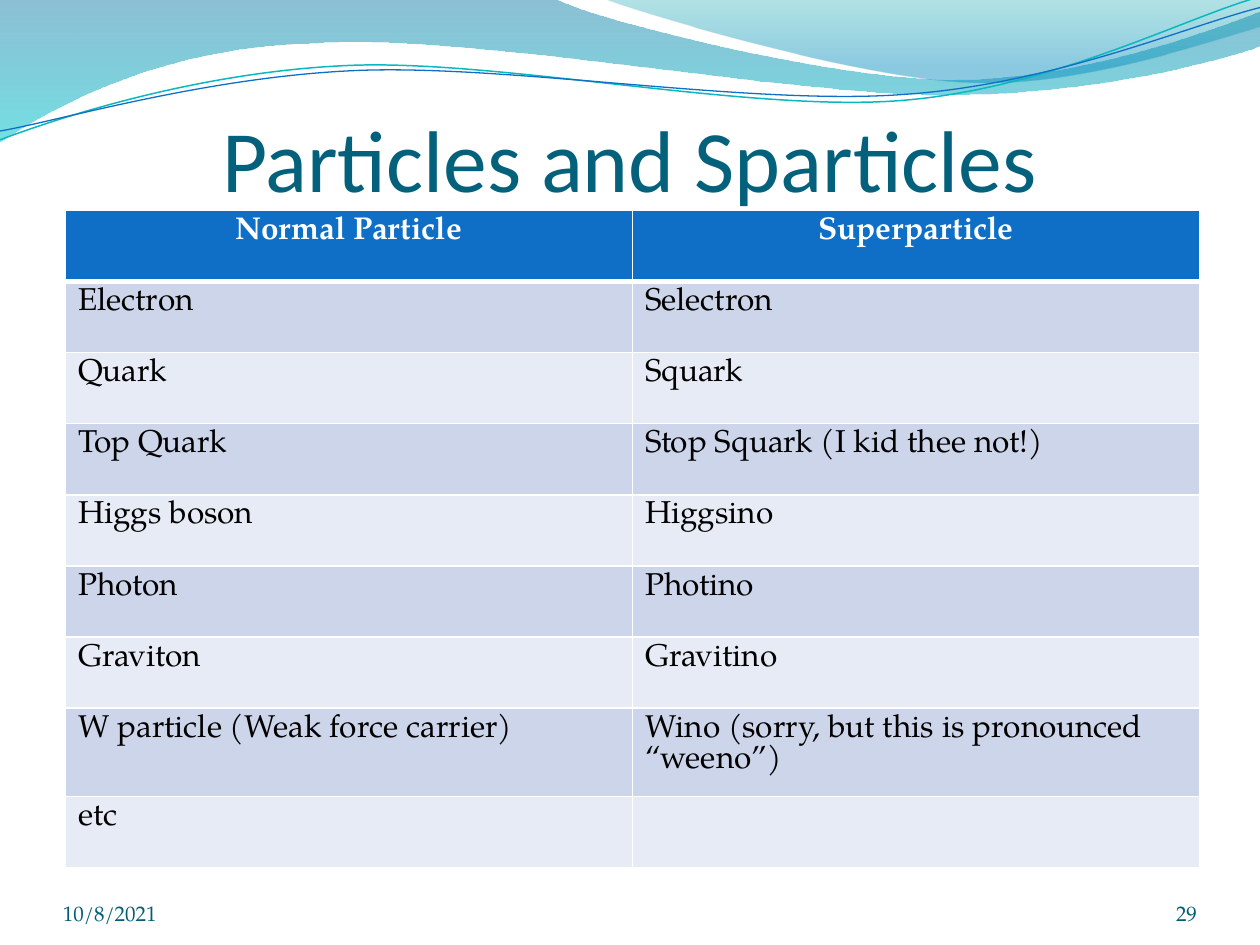
import pptx
import pptx.dml.color
import pptx.enum.text
import pptx.oxml
import pptx.oxml.ns
import pptx.util
from lxml import etree

Inches, Pt = pptx.util.Inches, pptx.util.Pt
RGBColor = pptx.dml.color.RGBColor
ALIGN = pptx.enum.text.PP_ALIGN
BOTTOM = pptx.enum.text.MSO_ANCHOR.BOTTOM
qn = pptx.oxml.ns.qn

WHITE = RGBColor(0xFF, 0xFF, 0xFF)
BLACK = RGBColor(0, 0, 0)
BLUE = RGBColor(0x0F, 0x6F, 0xC6)
TEAL = RGBColor(0x0A, 0xB8, 0xBF)
TITLE = RGBColor(0x04, 0x61, 0x7B)
FOOT = RGBColor(0x04, 0x5D, 0x75)
BANDS = RGBColor(0xE7, 0xEB, 0xF5), RGBColor(0xCC, 0xD5, 0xEA)
DEEP = RGBColor(0x00, 0x74, 0xA1)
AQUA = RGBColor(0x00, 0xC6, 0xCF)
GREEN = RGBColor(0x00, 0xA1, 0xA9)
SKY = RGBColor(0x00, 0x8B, 0xBF)

HEAD, BODY = "Calibri", "TeX Gyre Pagella"

# Each wave is a start point, then line ends (2 numbers) or curves (6 numbers).
BAND = [(0, 0), (4.4, -0.01), (4.76, 0.17, 6.64, 0.63, 7.58, 0.63),
        (8.53, 0.63, 9.58, 0.26, 10, 0.09), (10.01, 0.36),
        (9.83, 0.44, 8.7, 0.76, 7.46, 0.75),
        (6.22, 0.75, 3.82, 0.28, 2.57, 0.34),
        (1.29, 0.36, 0.46, 0.83, -0.01, 1.13), (0, 0)]
CREST = [(4.79, -0.01), (5.09, 0.11, 6.82, 0.62, 7.69, 0.65),
         (8.56, 0.69, 9.61, 0.32, 10, 0.21), (10, 0), (4.79, -0.01)]
UPPER = [(0, 1.11), (0.48, 0.93, 1.58, 0.57, 2.77, 0.52),
         (3.95, 0.47, 5.93, 0.89, 7.13, 0.8),
         (8.33, 0.71, 9.38, 0.15, 9.98, -0.02)]
LOWER = [(0, 1.04), (0.47, 0.96, 1.64, 0.61, 2.83, 0.56),
         (4.03, 0.51, 5.97, 0.84, 7.17, 0.75),
         (8.36, 0.67, 9.41, 0.21, 10, 0.06)]

ROWS = [
    ("Normal Particle", "Superparticle"),
    ("Electron", "Selectron"),
    ("Quark", "Squark"),
    ("Top Quark", "Stop Squark (I kid thee not!)"),
    ("Higgs boson", "Higgsino"),
    ("Photon", "Photino"),
    ("Graviton", "Gravitino"),
    ("W particle (Weak force carrier)",
     "Wino (sorry, but this is pronounced “weeno”)"),
    ("etc", ""),
]


class Deck:
    def __init__(self):
        self.file = pptx.Presentation()
        self.file.slide_width = Inches(10)
        self.file.slide_height = Inches(7.5)
        self.slide = self.file.slides.add_slide(self.file.slide_layouts[6])

    def style(self, font, size, color, face=BODY, bold=False):
        font.name, font.size, font.bold = face, Pt(size), bold
        font.color.rgb = color

    def wave(self, wave, closed):
        """Draw the wave's end points, then bend its lines into curves."""
        ends = [tuple(map(Inches, part[-2:])) for part in wave]
        pen = self.slide.shapes.build_freeform(*ends[0])
        pen.add_line_segments(ends[1:], close=closed)
        shape = pen.convert_to_shape()
        shape.shadow.inherit = False
        lines = list(shape._element.iter(qn("a:lnTo")))
        for line, part in zip(lines, wave[1:]):
            if len(part) == 2:
                continue
            bend = etree.Element(qn("a:cubicBezTo"))
            for x, y in zip(part[::2], part[1::2]):
                etree.SubElement(bend, qn("a:pt"), x=str(Inches(x) - shape.left),
                                 y=str(Inches(y) - shape.top))
            line.getparent().replace(line, bend)
        return shape

    def fade(self, wave, stops):
        """Fill a wave from top to bottom; a stop is place, colour, opacity."""
        shape = self.wave(wave, True)
        shape.line.fill.background()
        shape.fill.gradient()
        shape.fill.gradient_angle = 270
        for stop, (place, color, alpha) in zip(shape.fill.gradient_stops, stops):
            stop.position = place
            stop.color.rgb = color
        tints = shape.fill._xPr.iter(qn("a:srgbClr"))
        for tint, (_, _, alpha) in zip(tints, stops):
            etree.SubElement(tint, qn("a:alpha"), val=str(alpha * 1000))

    def curve(self, wave, color, width):
        shape = self.wave(wave, False)
        shape.fill.background()
        shape.line.color.rgb = color
        shape.line.width = Pt(width)

    def text(self, words, box, size, color, face=BODY, align=ALIGN.LEFT):
        frame = self.slide.shapes.add_textbox(*map(Inches, box)).text_frame
        frame.word_wrap = True
        frame.vertical_anchor = BOTTOM
        frame.margin_left = frame.margin_right = 0
        frame.margin_top = frame.margin_bottom = 0
        frame.text = words
        para = frame.paragraphs[0]
        para.alignment = align
        self.style(para.font, size, color, face)

    def border(self, cell, base):
        props = cell._tc.get_or_add_tcPr()
        widths = {"lnL": 1, "lnR": 1, "lnT": 1, "lnB": base}
        for spot, (tag, width) in enumerate(widths.items()):
            line = etree.Element(qn("a:" + tag), w=str(Pt(width)))
            fill = etree.SubElement(line, qn("a:solidFill"))
            etree.SubElement(fill, qn("a:srgbClr"), val=str(WHITE))
            props.insert(spot, line)

    def table(self, rows, *box):
        grid = self.slide.shapes.add_table(len(rows), len(rows[0]),
                                           *map(Inches, box)).table
        for r, row in enumerate(rows):
            for c, words in enumerate(row):
                cell = grid.cell(r, c)
                cell.fill.solid()
                cell.fill.fore_color.rgb = BANDS[r % 2] if r else BLUE
                self.border(cell, 1 if r else 3)
                if not words:
                    continue
                para = cell.text_frame.paragraphs[0]
                para.alignment = ALIGN.LEFT if r else ALIGN.CENTER
                # Row heights follow the font of the run, not the paragraph.
                run = para.add_run()
                run.text = words
                self.style(run.font, 18, BLACK if r else WHITE, bold=not r)


def main():
    deck = Deck()
    deck.fade(BAND, [(0, DEEP, 45), (1, AQUA, 55)])
    deck.fade(CREST, [(0, GREEN, 30), (0.8, SKY, 45)])
    deck.curve(UPPER, TEAL, 0.85)
    deck.curve(LOWER, BLUE, 0.75)
    deck.text("Particles and Sparticles", (0.5, 0.77, 9, 0.9), 50, TITLE,
              face=HEAD, align=ALIGN.CENTER)
    deck.table(ROWS, 0.52, 1.67, 9, 5.08)
    deck.text("10/8/2021", (0.5, 6.95, 2.33, 0.4), 12, FOOT)
    deck.text("29", (8.67, 6.95, 0.83, 0.4), 12, FOOT, align=ALIGN.RIGHT)
    deck.file.save("out.pptx")


if __name__ == "__main__":
    main()
